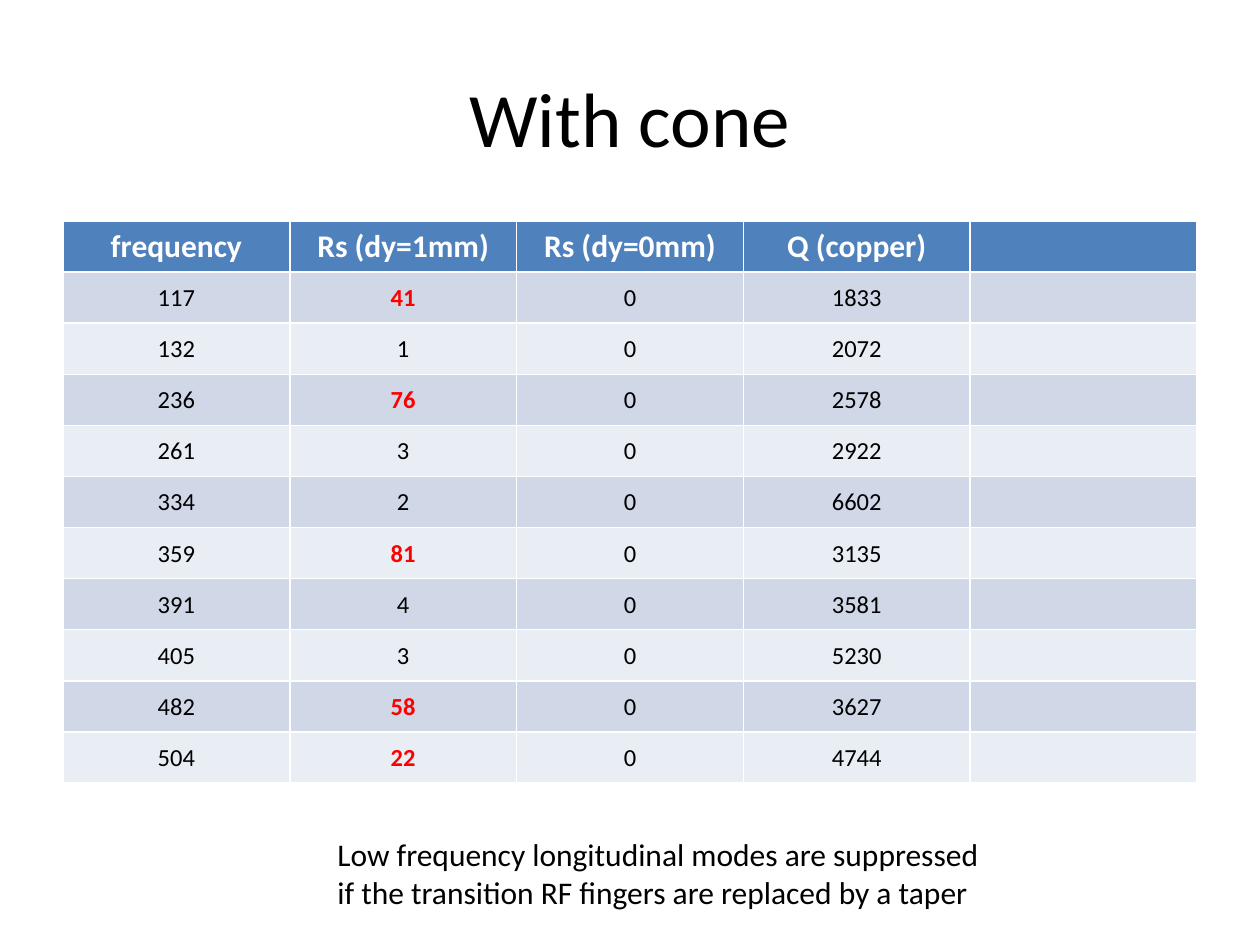
from pptx import Presentation, util as u
from pptx.dml.color import RGBColor
from pptx.enum import text

# Content
TITLE = "With cone"
HEADERS = ["frequency", "Rs (dy=1mm)", "Rs (dy=0mm)", "Q (copper)", ""]
MODES = [
    (117, 41, 0, 1833),
    (132, 1, 0, 2072),
    (236, 76, 0, 2578),
    (261, 3, 0, 2922),
    (334, 2, 0, 6602),
    (359, 81, 0, 3135),
    (391, 4, 0, 3581),
    (405, 3, 0, 5230),
    (482, 58, 0, 3627),
    (504, 22, 0, 4744),
]
CONCLUSION = ("Low frequency longitudinal modes are suppressed \v"
              "if the transition RF fingers are replaced by a taper")
RS_COLUMN, STRONG_RS = 1, 20  # larger impedances are highlighted

COLORS = {"text": "000000", "header_text": "FFFFFF", "strong": "FF0000",
          "header": "4F81BD", "odd": "D0D8E8", "even": "E9EDF4"}
FONT = "Calibri"
PX = u.Inches(1) / 126


def px(*lengths):
    return [round(n * PX) for n in lengths]


def style(paragraph, size, color="text", bold=False, align=text.PP_ALIGN.CENTER):
    paragraph.alignment = align
    font = paragraph.font
    font.name, font.size, font.bold = FONT, u.Pt(size), bold
    font.color.rgb = RGBColor.from_string(COLORS[color])


def fill(cell, color):
    cell.fill.solid()
    cell.fill.fore_color.rgb = RGBColor.from_string(COLORS[color])


prs = Presentation()
prs.slide_width, prs.slide_height = px(1260, 945)
slide = prs.slides.add_slide(prs.slide_layouts[5])

# Title
title = slide.shapes.title
title.left, title.top, title.width, title.height = px(63, 38, 1134, 157)
title.text_frame.text = TITLE
title.text_frame.vertical_anchor = text.MSO_ANCHOR.MIDDLE
style(title.text_frame.paragraphs[0], 44)

# Table of modes: the default table style supplies the white borders
table = slide.shapes.add_table(len(MODES) + 1, len(HEADERS),
                               *px(63, 221, 1134, 562)).table
for cell, header in zip(table.rows[0].cells, HEADERS):
    cell.text = header
    fill(cell, "header")
    style(cell.text_frame.paragraphs[0], 18, "header_text", bold=True)

for r, mode in enumerate(MODES, start=1):
    for cell in table.rows[r].cells:
        fill(cell, "odd" if r % 2 else "even")
    for c, value in enumerate(mode):
        cell = table.cell(r, c)
        cell.text = str(value)
        cell.vertical_anchor = text.MSO_ANCHOR.MIDDLE
        cell.margin_left = cell.margin_top = cell.margin_right = px(1)[0]
        cell.margin_bottom = 0
        strong = c == RS_COLUMN and value > STRONG_RS
        style(cell.text_frame.paragraphs[0], 14,
              "strong" if strong else "text", bold=strong)

# Conclusion
conclusion = slide.shapes.add_textbox(*px(325, 829, 682, 89)).text_frame
conclusion.word_wrap = False
conclusion.auto_size = text.MSO_AUTO_SIZE.SHAPE_TO_FIT_TEXT
conclusion.text = CONCLUSION
style(conclusion.paragraphs[0], 18, align=text.PP_ALIGN.LEFT)

prs.save("out.pptx")
